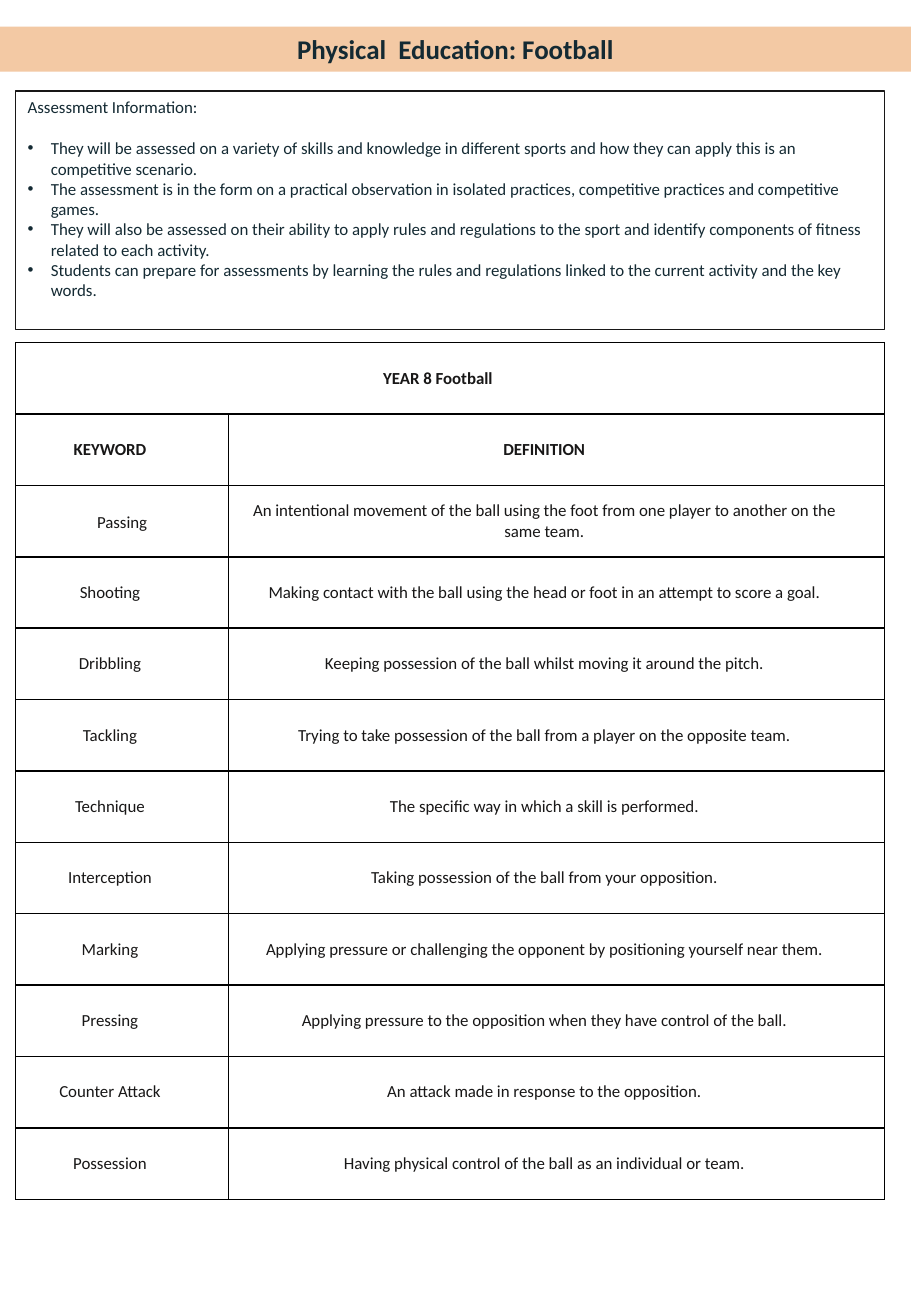
from lxml.etree import SubElement
from pptx import Presentation
from pptx.dml.color import RGBColor
from pptx.enum.shapes import MSO_SHAPE as Shape
from pptx.enum.text import MSO_ANCHOR as Anchor, PP_ALIGN as Align
from pptx.oxml.ns import qn
from pptx.util import Inches, Pt

NAVY, INK, BLACK, PEACH = "142A33", "181717", "000000", "F3C9A4"

ASSESSMENT = [
    "They will be assessed on a variety of skills and knowledge in different sports and how they can apply this is an competitive scenario.",
    "The assessment is in the form on a practical observation in isolated practices, competitive practices and competitive games.",
    "They will also be assessed on their ability to apply rules and regulations to the sport and identify components of fitness related to each activity.",
    "Students can prepare for assessments by learning the rules and regulations linked to the current activity and the key words.",
]
KEYWORDS = [
    ("KEYWORD", "DEFINITION"),
    ("Passing", "An intentional movement of the ball using the foot from one player to another on the same team."),
    ("Shooting", "Making contact with the ball using the head or foot in an attempt to score a goal."),
    ("Dribbling", "Keeping possession of the ball whilst moving it around the pitch."),
    ("Tackling", "Trying to take possession of the ball from a player on the opposite team."),
    ("Technique", "The specific way in which a skill is performed."),
    ("Interception", "Taking possession of the ball from your opposition."),
    ("Marking", "Applying pressure or challenging the opponent by positioning yourself near them."),
    ("Pressing", "Applying pressure to the opposition when they have control of the ball."),
    ("Counter Attack", "An attack made in response to the opposition."),
    ("Possession", "Having physical control of the ball as an individual or team."),
]


def color(value):
    return RGBColor.from_string(value)


def write(paragraph, text, size=10, ink=INK, bold=False, align=Align.LEFT,
          after=0, spacing=None, bullet=False):
    if bullet:
        properties = paragraph._p.get_or_add_pPr()
        properties.set("marL", str(Inches(0.19)))
        properties.set("indent", str(-Inches(0.19)))
        SubElement(properties, qn("a:buFont"), typeface="Arial")
        SubElement(properties, qn("a:buChar"), char="•")
    paragraph.alignment = align
    paragraph.space_after = Pt(after)
    if spacing:
        paragraph.line_spacing = spacing
    run = paragraph.add_run()
    run.text = text
    run.font.name, run.font.size, run.font.bold = "Calibri", Pt(size), bold
    run.font.color.rgb = color(ink)


def add_box(slide, left, top, width, height, fill=None, line=None, anchor=Anchor.TOP):
    shape = slide.shapes.add_shape(
        Shape.RECTANGLE, Inches(left), Inches(top), Inches(width), Inches(height))
    shape.shadow.inherit = False
    if fill:
        shape.fill.solid()
        shape.fill.fore_color.rgb = color(fill)
    else:
        shape.fill.background()
    if line:
        shape.line.color.rgb = color(line)
        shape.line.width = Pt(0.75)
    else:
        shape.line.fill.background()
    shape.text_frame.word_wrap = True
    shape.text_frame.vertical_anchor = anchor
    return shape.text_frame


def add_title(slide, left, top, width, height):
    frame = add_box(slide, left, top, width, height, fill=PEACH, anchor=Anchor.MIDDLE)
    write(frame.paragraphs[0], "Physical  Education: Football", size=16, ink=NAVY,
          bold=True, align=Align.CENTER)


def add_assessment(slide, left, top, width, height):
    frame = add_box(slide, left, top, width, height, line=INK)
    write(frame.paragraphs[0], "Assessment Information:", ink=NAVY, after=12.2)
    for point in ASSESSMENT:
        write(frame.add_paragraph(), point, ink=NAVY, bullet=True)


def format_cell(cell, right=0.27):
    cell.vertical_anchor = Anchor.MIDDLE
    cell.margin_left, cell.margin_right = Inches(0.07), Inches(right)
    cell.margin_top = cell.margin_bottom = 0
    properties = cell._tc.get_or_add_tcPr()
    for side in ("lnL", "lnR", "lnT", "lnB"):
        border = SubElement(properties, qn(f"a:{side}"), w=str(Pt(1)))
        fill = SubElement(border, qn("a:solidFill"))
        SubElement(fill, qn("a:srgbClr"), val=BLACK)
    cell.fill.background()


def add_keywords(slide, left, top, width, height):
    rows = len(KEYWORDS) + 1
    table = slide.shapes.add_table(
        rows, 2, Inches(left), Inches(top), Inches(width), Inches(height)).table
    table.first_row = table.horz_banding = False
    table.columns[0].width = Inches(1.75)
    table.columns[1].width = Inches(width - 1.75)
    for row in table.rows:
        row.height = Inches(height / rows)

    # Heading across both columns
    table.cell(0, 0).merge(table.cell(0, 1))
    for column in range(2):
        format_cell(table.cell(0, column))
    write(table.cell(0, 0).text_frame.paragraphs[0], "YEAR 8 Football",
          bold=True, align=Align.CENTER, after=6)

    # Column names and definitions
    for row, entry in enumerate(KEYWORDS, start=1):
        for column, text in enumerate(entry):
            cell = table.cell(row, column)
            is_passing = text == "Passing"
            format_cell(cell, right=0.07 if is_passing else 0.27)
            write(cell.text_frame.paragraphs[0], text, bold=row == 1,
                  align=Align.CENTER, after=6, spacing=1.18 if is_passing else None)


def main():
    presentation = Presentation()
    presentation.slide_width, presentation.slide_height = Inches(7.5), Inches(10.83)
    slide = presentation.slides.add_slide(presentation.slide_layouts[6])
    add_title(slide, 0, 0.22, 7.5, 0.37)
    add_assessment(slide, 0.13, 0.75, 7.15, 1.96)
    add_keywords(slide, 0.13, 2.82, 7.15, 7.05)
    presentation.save("out.pptx")


if __name__ == "__main__":
    main()
